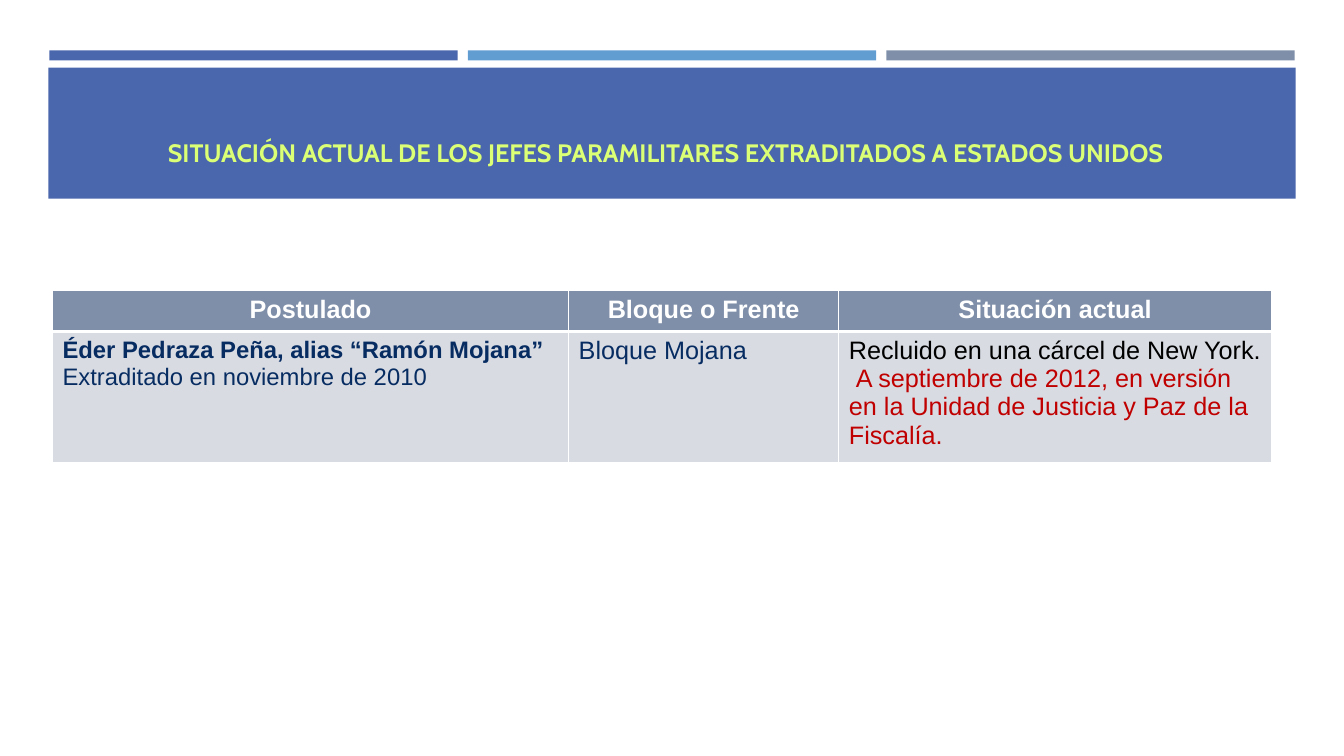
import pptx
import pptx.dml.color
import pptx.enum.shapes
import pptx.enum.text
import pptx.oxml
import pptx.oxml.ns
import pptx.util

Inches = pptx.util.Inches
Pt = pptx.util.Pt
ALIGN = pptx.enum.text.PP_ALIGN

COLORS = {
    "blue": "4A66AC",
    "sky": "629DD1",
    "slate": "7F8FA9",
    "lime": "DBFF75",
    "pale": "D8DBE2",
    "navy": "072C62",
    "red": "C00000",
    "black": "000000",
    "white": "FFFFFF",
}

HEADERS = ["Postulado", "Bloque o Frente", "Situación actual"]

# Each cell is a list of paragraphs, each paragraph a list of (text, size, color, bold)
DETAILS = [
    [[("Éder Pedraza Peña, alias “Ramón Mojana”", 17, "navy", True)],
     [("Extraditado en noviembre de 2010", 17, "navy", False)]],
    [[("Bloque Mojana", 18, "navy", False)]],
    [[("Recluido en una cárcel de New York.  ", 18, "black", False),
      ("A septiembre de 2012, en versión en la Unidad de Justicia y Paz de la Fiscalía.",
       18, "red", False)]],
]


def rgb(name):
    return pptx.dml.color.RGBColor.from_string(COLORS[name])


def add_bar(slide, left, top, width, height, color):
    shape = slide.shapes.add_shape(
        pptx.enum.shapes.MSO_SHAPE.RECTANGLE,
        Inches(left), Inches(top), Inches(width), Inches(height))
    shape.shadow.inherit = False
    shape.fill.solid()
    shape.fill.fore_color.rgb = rgb(color)
    shape.line.fill.background()


def add_run(paragraph, text, size, color, bold, font="Arial"):
    run = paragraph.add_run()
    run.text = text
    run.font.name = font
    run.font.size = Pt(size)
    run.font.bold = bold
    run.font.color.rgb = rgb(color)


def add_title(slide, text):
    box = slide.shapes.add_textbox(Inches(0.6), Inches(0.92), Inches(12.06), Inches(0.79))
    frame = box.text_frame
    frame.word_wrap = True
    frame.vertical_anchor = pptx.enum.text.MSO_ANCHOR.BOTTOM
    paragraph = frame.paragraphs[0]
    paragraph.alignment = ALIGN.CENTER
    paragraph.line_spacing = 1.5
    add_run(paragraph, text, 18, "lime", True, "Cabin")


def set_borders(cell, top, bottom):
    properties = cell._tc.get_or_add_tcPr()
    sides = [("lnL", 1), ("lnR", 1), ("lnT", top), ("lnB", bottom)]
    for position, (side, width) in enumerate(sides):
        border = pptx.oxml.parse_xml(
            f'<a:{side} {pptx.oxml.ns.nsdecls("a")} w="{Pt(width)}">'
            f'<a:solidFill><a:srgbClr val="{COLORS["white"]}"/></a:solidFill></a:{side}>')
        properties.insert(position, border)


def fill_cell(cell, paragraphs, fill, alignment, top, bottom):
    cell.fill.solid()
    cell.fill.fore_color.rgb = rgb(fill)
    set_borders(cell, top, bottom)
    frame = cell.text_frame
    for index, runs in enumerate(paragraphs):
        paragraph = frame.add_paragraph() if index else frame.paragraphs[0]
        paragraph.alignment = alignment
        for run in runs:
            add_run(paragraph, *run)


def add_status_table(slide):
    table = slide.shapes.add_table(
        2, 3, Inches(0.52), Inches(2.88), Inches(12.09), Inches(1.41)).table
    for column, width in zip(table.columns, (5.12, 2.68, 4.29)):
        column.width = Inches(width)
    for row, height in zip(table.rows, (0.41, 1)):
        row.height = Inches(height)
    for index, (header, detail) in enumerate(zip(HEADERS, DETAILS)):
        fill_cell(table.cell(0, index), [[(header, 18, "white", True)]],
                  "slate", ALIGN.CENTER, 1, 3)
        fill_cell(table.cell(1, index), detail, "pale", ALIGN.LEFT, 3, 1)


def main():
    presentation = pptx.Presentation()
    presentation.slide_width = Inches(13.33)
    presentation.slide_height = Inches(7.5)
    slide = presentation.slides.add_slide(presentation.slide_layouts[6])

    # Accent strips and title band
    for index, color in enumerate(("blue", "sky", "slate")):
        add_bar(slide, 0.49 + 4.15 * index, 0.5, 4.05, 0.1, color)
    add_bar(slide, 0.48, 0.67, 12.37, 1.3, "blue")
    add_title(slide, "SITUACIÓN ACTUAL DE LOS JEFES PARAMILITARES EXTRADITADOS A ESTADOS UNIDOS ")

    # Status of the extradited leader
    add_status_table(slide)

    presentation.save("out.pptx")


if __name__ == "__main__":
    main()
